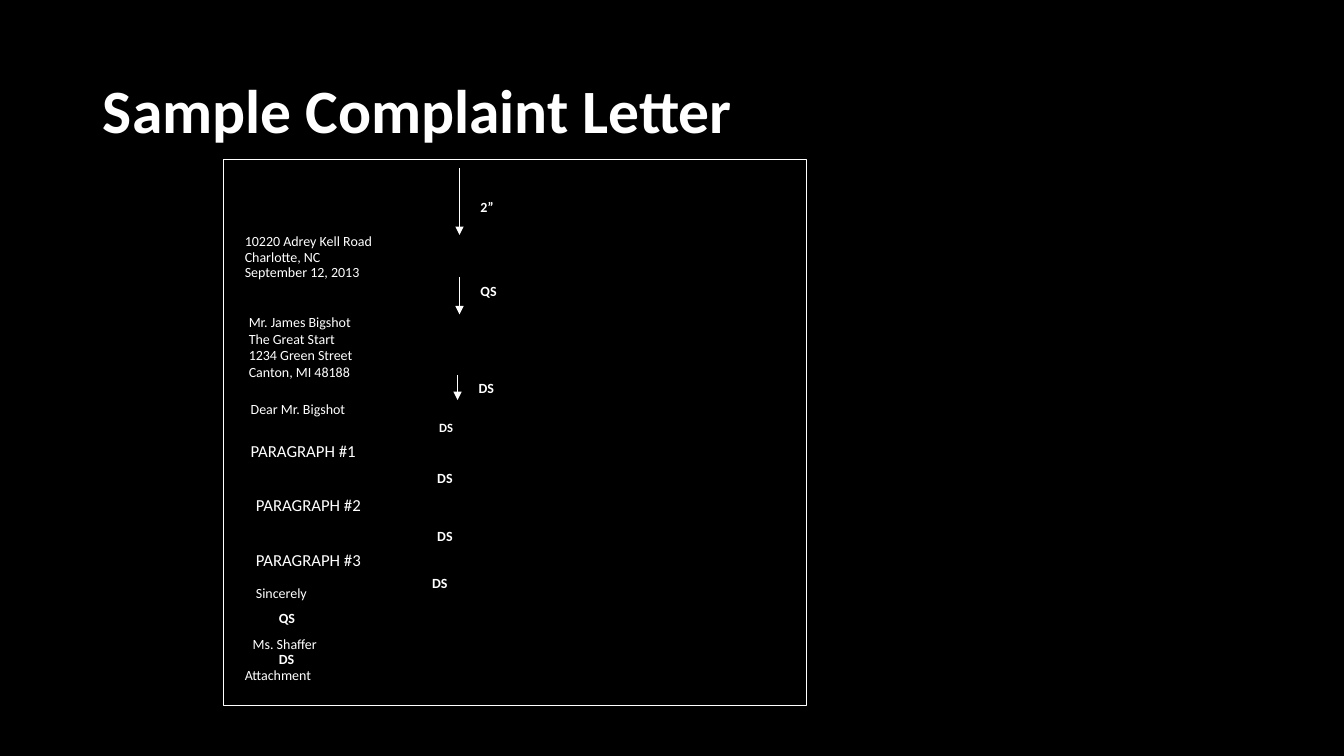
from lxml.etree import SubElement
from pptx import Presentation
from pptx.dml.color import RGBColor
from pptx.enum.shapes import MSO_CONNECTOR as Connector, MSO_SHAPE as Shape
from pptx.enum.text import MSO_ANCHOR as Anchor, MSO_AUTO_SIZE as AutoSize, PP_ALIGN as Align
from pptx.oxml.ns import qn
from pptx.util import Cm, Pt

BLACK = RGBColor(0x00, 0x00, 0x00)
WHITE = RGBColor(0xFF, 0xFF, 0xFF)
FONT = "Calibri"
TITLE_ONLY = 5
LINE_WIDTH = Pt(0.75)

# Letter text: left, top, width, size, lines
LETTER_PARTS = [
    (6.02, 7.77, 5.08, 10, ["Mr. James Bigshot", "The Great Start",
                            "1234 Green Street", "Canton, MI 48188"]),
    (6.07, 9.96, 4.24, 10, ["Dear Mr. Bigshot"]),
    (6.07, 10.97, 10.44, 12, ["PARAGRAPH #1"]),
    (6.2, 12.34, 10.44, 12, ["PARAGRAPH #2"]),
    (6.2, 13.72, 10.44, 12, ["PARAGRAPH #3"]),
    (6.2, 14.61, 5.92, 10, ["Sincerely"]),
    (6.12, 15.88, 5.92, 10, ["Ms. Shaffer"]),
    (5.92, 16.66, 4.52, 10, ["Attachment"]),
]

# Spacing marks: left, top, size, label
SPACING_MARKS = [
    (11.86, 4.88, 10, "2”"),
    (11.86, 6.99, 10, "QS"),
    (11.81, 9.45, 10, "DS"),
    (10.82, 10.46, 9, "DS"),
    (10.77, 11.71, 10, "DS"),
    (10.77, 13.18, 10, "DS"),
    (10.64, 14.35, 10, "DS"),
    (6.78, 15.24, 10, "QS"),
    (6.78, 16.26, 10, "DS"),
]

# Spacing arrows: x, start, end
SPACING_ARROWS = [(11.58, 4.24, 5.92), (11.58, 6.99, 7.92), (11.53, 9.45, 10.08)]


def style_runs(paragraph, size, bold=False):
    for run in paragraph.runs:
        run.font.name = FONT
        run.font.size = Pt(size)
        run.font.bold = bold
        run.font.color.rgb = WHITE


def add_title(slide, text):
    title = slide.shapes.title
    title.left, title.top, title.width, title.height = Cm(2.34), Cm(1.02), Cm(29.21), Cm(3.68)
    frame = title.text_frame
    frame.text = text
    frame.vertical_anchor = Anchor.MIDDLE
    heading = frame.paragraphs[0]
    heading.alignment = Align.LEFT
    heading.line_spacing = 0.9
    style_runs(heading, 44, bold=True)


def add_page_frame(slide):
    page = slide.shapes.add_shape(Shape.RECTANGLE, Cm(5.64), Cm(4.01), Cm(14.68), Cm(13.77))
    page.shadow.inherit = False
    page.fill.background()
    page.line.color.rgb = WHITE
    page.line.width = LINE_WIDTH


def add_text(slide, left, top, width, size, lines, bold=False):
    height = 0.25 + len(lines) * size * 0.043
    box = slide.shapes.add_textbox(Cm(left), Cm(top), Cm(width), Cm(height))
    frame = box.text_frame
    frame.word_wrap = True
    frame.auto_size = AutoSize.SHAPE_TO_FIT_TEXT
    frame.text = "\n".join(lines)
    for paragraph in frame.paragraphs:
        style_runs(paragraph, size, bold)
    return box


def add_sender_address(slide):
    address = add_text(slide, 5.92, 5.92, 5.36, 10, [
        "10220 Adrey Kell Road", "Charlotte, NC", "September 12, 2013"])
    for paragraph in address.text_frame.paragraphs:
        paragraph.line_spacing = 0.5
        paragraph.space_before = Pt(5)


def add_arrow(slide, x, start, end):
    arrow = slide.shapes.add_connector(Connector.STRAIGHT, Cm(x), Cm(start), Cm(x), Cm(end))
    arrow.line.color.rgb = WHITE
    arrow.line.width = LINE_WIDTH
    SubElement(arrow.line._get_or_add_ln(), qn("a:tailEnd"), type="triangle")
    SubElement(arrow._element.spPr, qn("a:effectLst"))


def main():
    prs = Presentation()
    prs.slide_width, prs.slide_height = Cm(33.87), Cm(19.05)
    slide = prs.slides.add_slide(prs.slide_layouts[TITLE_ONLY])
    slide.background.fill.solid()
    slide.background.fill.fore_color.rgb = BLACK

    # Title and page outline
    add_title(slide, "Sample Complaint Letter")
    add_page_frame(slide)

    # Letter from address to attachment
    add_sender_address(slide)
    for left, top, width, size, lines in LETTER_PARTS:
        add_text(slide, left, top, width, size, lines)

    # Spacing between the parts
    for left, top, size, label in SPACING_MARKS:
        add_text(slide, left, top, 1.7, size, [label], bold=True)
    for x, start, end in SPACING_ARROWS:
        add_arrow(slide, x, start, end)

    prs.save("out.pptx")


if __name__ == "__main__":
    main()
